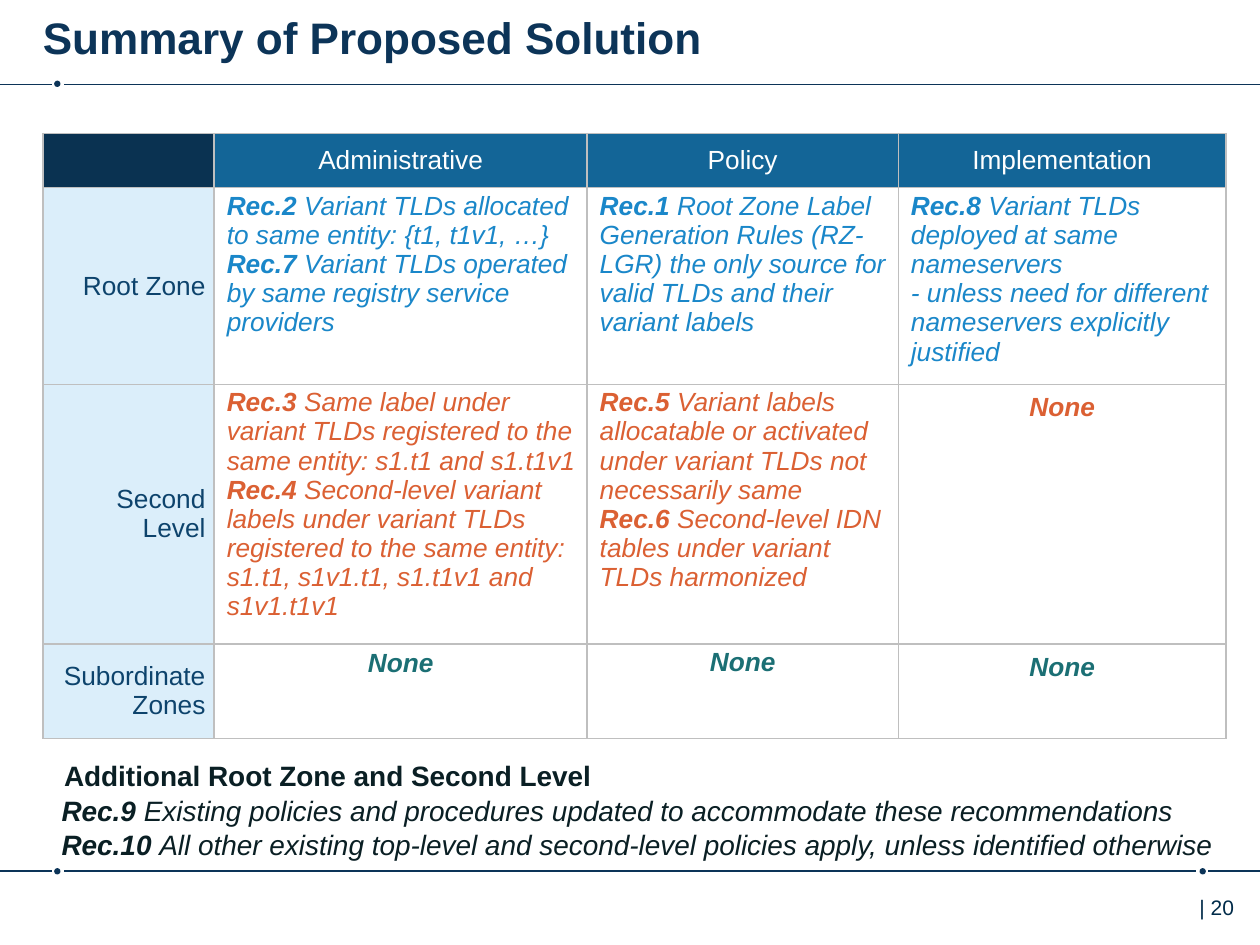
from copy import deepcopy

from lxml import etree
from pptx import Presentation
from pptx.dml.color import RGBColor
from pptx.enum.shapes import MSO_CONNECTOR, MSO_SHAPE
from pptx.enum.text import MSO_ANCHOR as ANCHOR, PP_ALIGN as ALIGN
from pptx.oxml.ns import qn
from pptx.util import Inches, Pt

COLORS = {
    "navy": "0C3458", "number": "002B49", "corner": "0A3251", "header": "136597",
    "white": "FFFFFF", "label": "0D436C", "label_fill": "CDE8F9", "border": "BFBFBF",
    "root": "1A87C9", "second": "DB6033", "sub": "1B6F74", "ink": "0A1F24",
}
WIDE, NARROW = (0.07, 0.04), (0.03, 0.03)
COLUMNS = [1.36, 2.96, 2.47, 2.6]
ROWS = [0.43, 1.06, 1.46, 0.75]
HEADERS = ["Administrative", "Policy", "Implementation"]
LABELS = ["Root Zone", "Second Level", "Subordinate Zones"]

# Each recommendation is a bold lead followed by regular text.
RECOMMENDATIONS = [
    ("root", [
        [("Rec.2 ", "Variant TLDs allocated to same entity: {t1, t1v1, …}"),
         ("Rec.7 ", "Variant TLDs operated by same registry service providers")],
        [("Rec.1 ", "Root Zone Label Generation Rules (RZ-LGR) the only source for "
                    "valid TLDs and their variant labels")],
        [("Rec.8 ", "Variant TLDs deployed at same nameservers"),
         ("", "- unless need for different nameservers explicitly justified")],
    ]),
    ("second", [
        [("Rec.3 ", "Same label under variant TLDs registered to the same entity: "
                    "s1.t1 and s1.t1v1"),
         ("Rec.4 ", "Second-level variant labels under variant TLDs registered to the "
                    "same entity: s1.t1, s1v1.t1, s1.t1v1 and s1v1.t1v1")],
        [("Rec.5 ", "Variant labels allocatable or activated under variant TLDs not "
                    "necessarily same"),
         ("Rec.6 ", "Second-level IDN tables under variant TLDs harmonized")],
    ]),
]
# Row, column, color, margins and line spacing of the cells without recommendations.
NONE_CELLS = [
    (2, 3, "second", NARROW, 1.15),
    (3, 1, "sub", WIDE, None),
    (3, 2, "sub", NARROW, None),
    (3, 3, "sub", WIDE, 1.15),
]
ADDITIONAL = [
    ("Rec.9 ", "Existing policies and procedures updated to accommodate these "
               "recommendations"),
    ("Rec.10 ", "All other existing top-level and second-level policies apply, "
                "unless identified otherwise"),
]


def rgb(name):
    return RGBColor.from_string(COLORS[name])


def style_font(font, size, color, bold=False, italic=False):
    font.name, font.size = "Arial", Pt(size)
    font.bold, font.italic = bold, italic
    font.color.rgb = rgb(color)


def write_recommendations(p, items, size, color, indent):
    """Fill a paragraph with bold leads and italic text, one item per line."""
    p_pr = p._p.get_or_add_pPr()
    p_pr.set("marL", str(Inches(indent)))
    p_pr.set("indent", "0")
    for i, item in enumerate(items):
        if i:
            p.add_line_break()
        for text, bold in zip(item, (True, False)):
            if text:
                r = p.add_run()
                r.text = text
                style_font(r.font, size, color, bold, True)
    for br in p._p.findall(qn("a:br")):
        br.append(deepcopy(p.runs[-1]._r.rPr))


def add_text_box(s, x, y, w, h):
    tf = s.shapes.add_textbox(Inches(x), Inches(y), Inches(w), Inches(h)).text_frame
    tf.word_wrap = True
    return tf


def add_text(s, x, y, w, h, text, size, color, bold=False):
    tf = add_text_box(s, x, y, w, h)
    tf.text = text
    style_font(tf.paragraphs[0].runs[0].font, size, color, bold)
    return tf


def add_dot(s, x, y):
    dot = s.shapes.add_shape(MSO_SHAPE.OVAL, Inches(x), Inches(y), Inches(0.05), Inches(0.05))
    dot.shadow.inherit = False
    dot.fill.solid()
    dot.fill.fore_color.rgb = rgb("navy")
    dot.line.fill.background()


def add_rule(s, x1, x2, y):
    rule = s.shapes.add_connector(MSO_CONNECTOR.STRAIGHT, Inches(x1), Inches(y),
                                  Inches(x2), Inches(y))
    rule.line.color.rgb = rgb("navy")
    rule.line.width = Pt(1)
    etree.SubElement(rule._element.spPr, qn("a:effectLst"))


def format_cell(cell, fill, margins=WIDE, alpha=None):
    cell.margin_left = cell.margin_right = Inches(margins[0])
    cell.margin_top = cell.margin_bottom = Inches(margins[1])
    cell.fill.solid()
    cell.fill.fore_color.rgb = rgb(fill)
    tc_pr = cell._tc.tcPr
    if alpha:
        color = tc_pr.find(".//" + qn("a:srgbClr"))
        etree.SubElement(color, qn("a:alpha"), val=str(alpha * 1000))
    for i, side in enumerate("LRTB"):
        ln = etree.Element(qn("a:ln" + side), w=str(Pt(1)))
        solid = etree.SubElement(ln, qn("a:solidFill"))
        etree.SubElement(solid, qn("a:srgbClr"), val=COLORS["border"])
        tc_pr.insert(i, ln)


def write_cell(cell, text, color, align, emphasis=False):
    cell.text = text
    p = cell.text_frame.paragraphs[0]
    p.alignment = align
    style_font(p.runs[0].font, 15, color, emphasis, emphasis)
    return p


def add_summary_table(s):
    frame = s.shapes.add_table(len(ROWS), len(COLUMNS), Inches(0.34), Inches(1.06),
                               Inches(9.38), Inches(4.81))
    table = frame.table
    for column, width in zip(table.columns, COLUMNS):
        column.width = Inches(width)
    for row, height in zip(table.rows, ROWS):
        row.height = Inches(height)

    format_cell(table.cell(0, 0), "corner")
    for j, text in enumerate(HEADERS, 1):
        cell = table.cell(0, j)
        format_cell(cell, "header")
        cell.vertical_anchor = ANCHOR.MIDDLE
        write_cell(cell, text, "white", ALIGN.CENTER)
    for i, text in enumerate(LABELS, 1):
        cell = table.cell(i, 0)
        format_cell(cell, "label_fill", alpha=70)
        cell.vertical_anchor = ANCHOR.MIDDLE
        write_cell(cell, text, "label", ALIGN.RIGHT)
    for i, (color, groups) in enumerate(RECOMMENDATIONS, 1):
        for j, items in enumerate(groups, 1):
            cell = table.cell(i, j)
            format_cell(cell, "white", NARROW, 70)
            write_recommendations(cell.text_frame.paragraphs[0], items, 15, color, 0.07)
    for i, j, color, margins, spacing in NONE_CELLS:
        cell = table.cell(i, j)
        format_cell(cell, "white", margins, 70)
        p = write_cell(cell, "None", color, ALIGN.CENTER, True)
        p.line_spacing = spacing


def main():
    prs = Presentation()
    prs.slide_width, prs.slide_height = Inches(10), Inches(7.5)
    s = prs.slides.add_slide(prs.slide_layouts[6])

    for x, y in [(0.43, 0.64), (0.43, 6.89), (9.52, 6.89)]:
        add_dot(s, x, y)
    for x1, x2, y in [(0, 0.41, 0.67), (0.51, 10, 0.67),
                      (0, 0.41, 6.91), (0.51, 9.49, 6.91), (9.59, 10, 6.91)]:
        add_rule(s, x1, x2, y)

    number = add_text(s, 9.29, 7.05, 0.87, 0.4, "| 20", 12, "number")
    number.margin_left = Inches(0.23)
    title = add_text(s, 0.34, 0.03, 8.86, 0.53, "Summary of Proposed Solution",
                     25.2, "navy", True)
    title.margin_left = title.margin_right = 0
    title.vertical_anchor = ANCHOR.MIDDLE

    add_summary_table(s)

    tf = add_text_box(s, 0.34, 6.25, 9.51, 0.64)
    write_recommendations(tf.paragraphs[0], ADDITIONAL, 16, "ink", 0.05)
    add_text(s, 0.41, 5.97, 4.85, 0.37, "Additional Root Zone and Second Level",
             16, "ink", True)
    prs.save("out.pptx")


if __name__ == "__main__":
    main()
